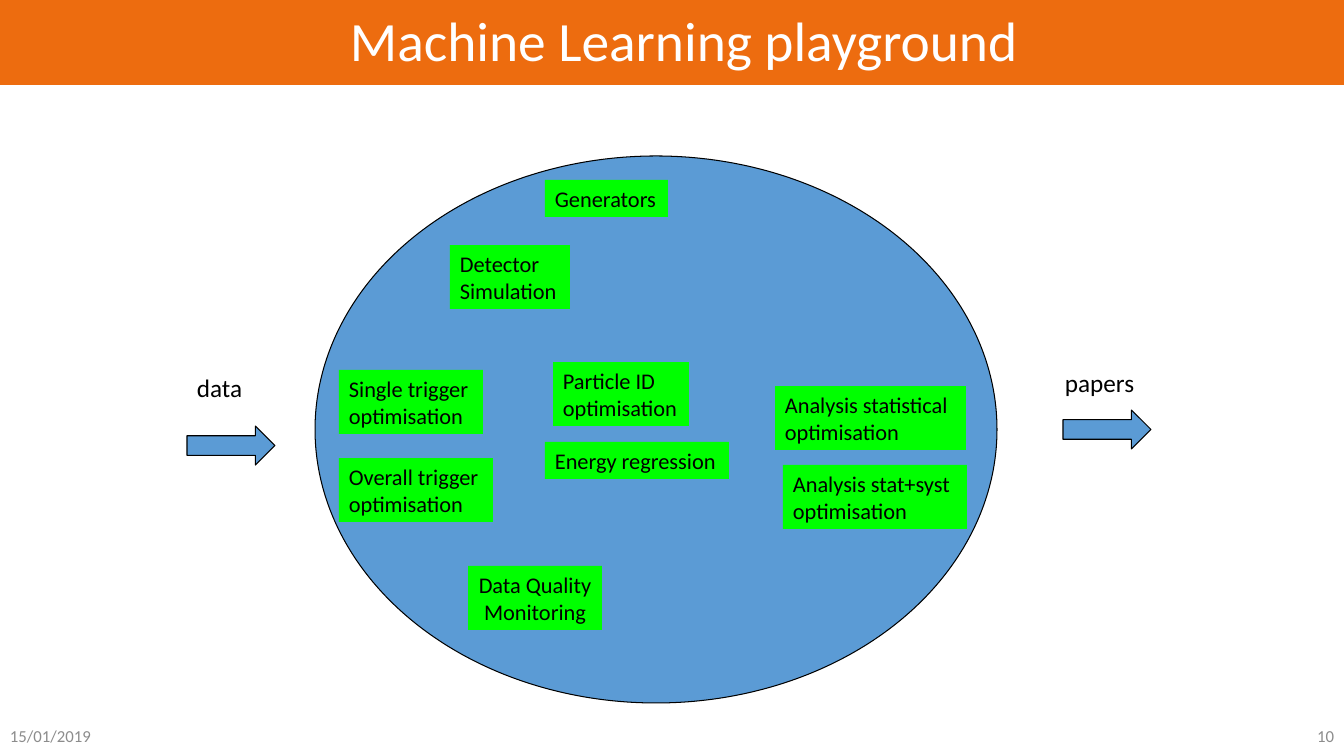
from pptx import Presentation
from pptx import util as u
from pptx.dml import color
from pptx.enum import shapes, text

SCALE = 914400 / 100.8
WIDE, HIGH = 1344, 756
BLUE, GREEN, BLACK = "5B9BD5", "00FF00", "000000"
ORANGE, WHITE, GREY = "ED6C0F", "FFFFFF", "8C8C8C"
LEFT, MID, RIGHT = text.PP_ALIGN.LEFT, text.PP_ALIGN.CENTER, text.PP_ALIGN.RIGHT

TOPICS = [
    ("Analysis statistical\noptimisation", 775, 386, 191, LEFT),
    ("Particle ID\noptimisation", 553, 362, 136, LEFT),
    ("Single trigger\noptimisation", 339, 370, 144, LEFT),
    ("Energy regression", 545, 442, 184, LEFT),
    ("Overall trigger\noptimisation", 339, 458, 154, LEFT),
    ("Detector\nSimulation", 450, 245, 120, LEFT),
    ("Generators", 545, 180, 123, LEFT),
    ("Analysis stat+syst\noptimisation", 783, 465, 184, LEFT),
    ("Data Quality\nMonitoring", 468, 566, 134, MID),
]


def px(n):
    return u.Emu(round(n * SCALE))


def area(*box):
    return [px(n) for n in box]


def rgb(code):
    return color.RGBColor.from_string(code)


def write(frame, words, size, ink, align=LEFT):
    frame.text = words
    for para in frame.paragraphs:
        para.alignment = align
        for run in para.runs:
            run.font.size = u.Pt(size)
            run.font.name = "Calibri"
            run.font.color.rgb = rgb(ink)


def shape(slide, kind, box, fill, line=None, weight=0.75):
    item = slide.shapes.add_shape(kind, *area(*box))
    item.shadow.inherit = False
    item.fill.solid()
    item.fill.fore_color.rgb = rgb(fill)
    if line:
        item.line.color.rgb = rgb(line)
        item.line.width = u.Pt(weight)
    else:
        item.line.fill.background()
    return item


def hug(frame):
    frame.word_wrap = False
    frame.auto_size = text.MSO_AUTO_SIZE.SHAPE_TO_FIT_TEXT


def topic(slide, words, x, y, w, align):
    h = 64 if "\n" in words else 37
    frame = shape(slide, shapes.MSO_SHAPE.RECTANGLE, (x, y, w, h), GREEN).text_frame
    frame.vertical_anchor = text.MSO_ANCHOR.TOP
    write(frame, words, 16, BLACK, align)
    hug(frame)


def label(slide, words, box):
    frame = slide.shapes.add_textbox(*area(*box)).text_frame
    write(frame, words, 18, BLACK)
    hug(frame)


def footer(slide, words, x, align):
    frame = slide.shapes.add_textbox(*area(x, 716, 302, 40)).text_frame
    frame.word_wrap = True
    frame.vertical_anchor = text.MSO_ANCHOR.MIDDLE
    write(frame, words, 12, GREY, align)


def header(slide, words):
    title = slide.shapes.title
    title.left, title.top, title.width, title.height = area(93, 10, 1159, 67)
    frame = title.text_frame
    write(frame, words, 39.6, WHITE)
    frame.margin_left = px(257)
    frame.word_wrap = True
    frame.auto_size = text.MSO_AUTO_SIZE.NONE
    frame.vertical_anchor = text.MSO_ANCHOR.MIDDLE
    frame.paragraphs[0].line_spacing = 0.9
    bar = shape(slide, shapes.MSO_SHAPE.RECTANGLE, (0, 0, WIDE, 84), ORANGE, ORANGE, 1)
    title.element.addprevious(bar.element)


def main():
    deck = Presentation()
    deck.slide_width, deck.slide_height = area(WIDE, HIGH)
    slide = deck.slides.add_slide(deck.slide_layouts[5])
    header(slide, "Machine Learning playground")
    shape(slide, shapes.MSO_SHAPE.OVAL, (315, 156, 682, 547), BLUE, BLACK)
    for x, y in [(187, 426), (1063, 410)]:
        shape(slide, shapes.MSO_SHAPE.RIGHT_ARROW, (x, y, 88, 39), BLUE, BLACK)
    label(slide, "papers", (1055, 362, 91, 40))
    label(slide, "data", (187, 367, 67, 40))
    for item in TOPICS:
        topic(slide, *item)
    footer(slide, "15/01/2019", 0, LEFT)
    footer(slide, "10", WIDE - 302, RIGHT)
    deck.save("out.pptx")


if __name__ == "__main__":
    main()
